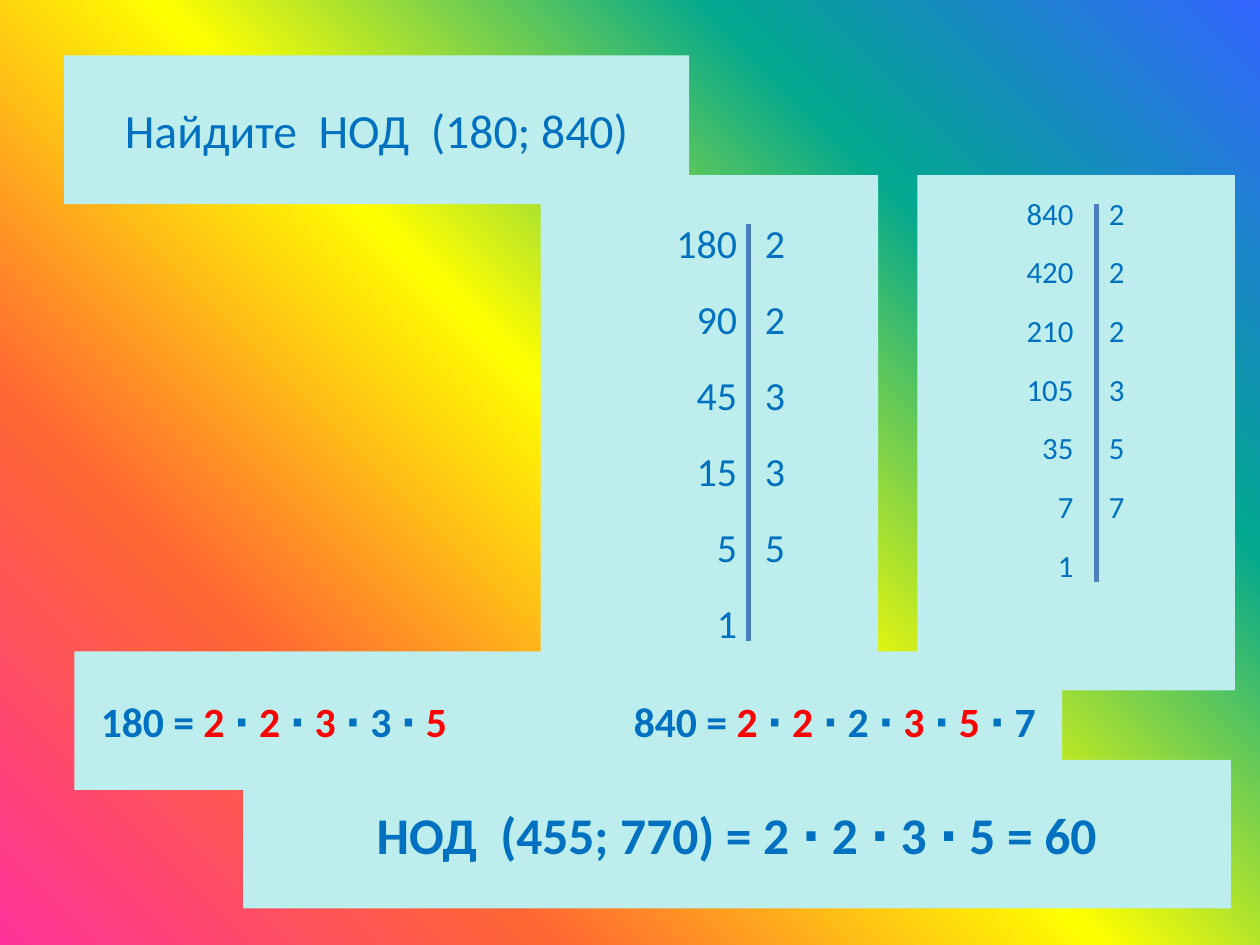
from pptx import Presentation
from pptx.dml.color import RGBColor
from pptx.enum.shapes import MSO_CONNECTOR, MSO_SHAPE
from pptx.enum.text import MSO_ANCHOR, PP_ALIGN
from pptx.oxml.ns import qn
from pptx.util import Inches, Pt
from lxml.etree import SubElement

PANEL = RGBColor(0xBD, 0xED, 0xEC)
TEXT = RGBColor(0x00, 0x70, 0xC0)
COMMON = RGBColor(0xFF, 0x00, 0x00)
RULE = RGBColor(0x4B, 0x7E, 0xBC)
RAINBOW = [(0, "FF3399"), (25, "FF6633"), (50, "FFFF00"),
           (75, "01A78F"), (100, "3366FF")]


def paint_background(s):
    fill = s.background.fill
    fill.gradient()
    fill.gradient_angle = 45
    stops = next(s.element.iter(qn("a:gsLst")))
    for stop in list(stops):
        stops.remove(stop)
    for percent, color in RAINBOW:
        stop = SubElement(stops, qn("a:gs"), pos=str(percent * 1000))
        SubElement(stop, qn("a:srgbClr"), val=color)


def add_panel(s, left, top, width, height, **frame):
    sp = s.shapes.add_shape(MSO_SHAPE.RECTANGLE, Inches(left), Inches(top),
                            Inches(width), Inches(height))
    sp.shadow.inherit = False
    sp.fill.solid()
    sp.fill.fore_color.rgb = PANEL
    sp.line.fill.background()
    tf = sp.text_frame
    settings = {"word_wrap": True, "vertical_anchor": MSO_ANCHOR.MIDDLE,
                "margin_left": 0, "margin_right": 0, **frame}
    for name, value in settings.items():
        setattr(tf, name, value)
    return tf


def write(p, text, size, bold=False, align=PP_ALIGN.CENTER):
    """Parts of the text between asterisks take the common-factor colour."""
    p.alignment = align
    for i, part in enumerate(text.split("*")):
        if part:
            r = p.add_run()
            r.text = part
            font = {"name": "Calibri", "size": Pt(size), "bold": bold}
            for name, value in font.items():
                setattr(r.font, name, value)
            r.font.color.rgb = COMMON if i % 2 else TEXT


def set_tabs(p, *tabs):
    tab_list = SubElement(p._p.get_or_add_pPr(), qn("a:tabLst"))
    for position, align in tabs:
        SubElement(tab_list, qn("a:tab"), pos=str(Inches(position)), algn=align)


def add_rule(s, x, top, bottom):
    line = s.shapes.add_connector(MSO_CONNECTOR.STRAIGHT, Inches(x), Inches(top),
                                  Inches(x), Inches(bottom))
    line.line.color.rgb = RULE
    line.line.width = Pt(3)
    SubElement(line._element.spPr, qn("a:effectLst"))


def add_factorization(s, box, rows, size, gap, inset, tabs, rule):
    tf = add_panel(s, *box, vertical_anchor=MSO_ANCHOR.TOP,
                   margin_top=Inches(inset), margin_bottom=0)
    for i, row in enumerate(rows):
        p = tf.add_paragraph() if i else tf.paragraphs[0]
        p.line_spacing = 0.8
        p.space_after = Pt(gap)
        write(p, "\t" + "\t".join(map(str, row)), size, align=PP_ALIGN.LEFT)
        set_tabs(p, *zip(tabs, ("r", "l")))
    add_rule(s, *rule)


def main():
    prs = Presentation()
    prs.slide_width, prs.slide_height = Inches(10), Inches(7.5)
    s = prs.slides.add_slide(prs.slide_layouts[6])
    paint_background(s)

    # Task
    tf = add_panel(s, 0.51, 0.44, 4.96, 1.18)
    write(tf.paragraphs[0], "Найдите  НОД  (180; 840)", 27.2)

    # Prime factors of both numbers
    add_factorization(
        s, (4.29, 1.39, 2.68, 4.09),
        [(180, 2), (90, 2), (45, 3), (15, 3), (5, 5), (1,)],
        size=22.8, gap=21.5, inset=0.42, tabs=(1.56, 1.78), rule=(5.94, 1.78, 5.09))
    add_factorization(
        s, (7.28, 1.39, 2.52, 4.09),
        [(840, 2), (420, 2), (210, 2), (105, 3), (35, 5), (7, 7), (1,)],
        size=17.6, gap=16.6, inset=0.21, tabs=(1.24, 1.52), rule=(8.7, 1.62, 4.62))

    # Answer
    tf = add_panel(s, 1.93, 6.03, 7.84, 1.18)
    write(tf.paragraphs[0], "НОД  (455; 770) = 2 ∙ 2 ∙ 3 ∙ 5 = 60", 29.4, bold=True)

    # Products with the common factors highlighted
    p = add_panel(s, 0.59, 5.17, 7.84, 1.1).paragraphs[0]
    write(p, "\t180 = *2* ∙ *2* ∙ *3* ∙ 3 ∙ *5*"
             "\t840 = *2* ∙ *2* ∙ 2 ∙ *3* ∙ *5* ∙ 7",
          23.8, bold=True, align=PP_ALIGN.LEFT)
    set_tabs(p, (0.21, "l"), (4.44, "l"))

    prs.save("out.pptx")


if __name__ == "__main__":
    main()
